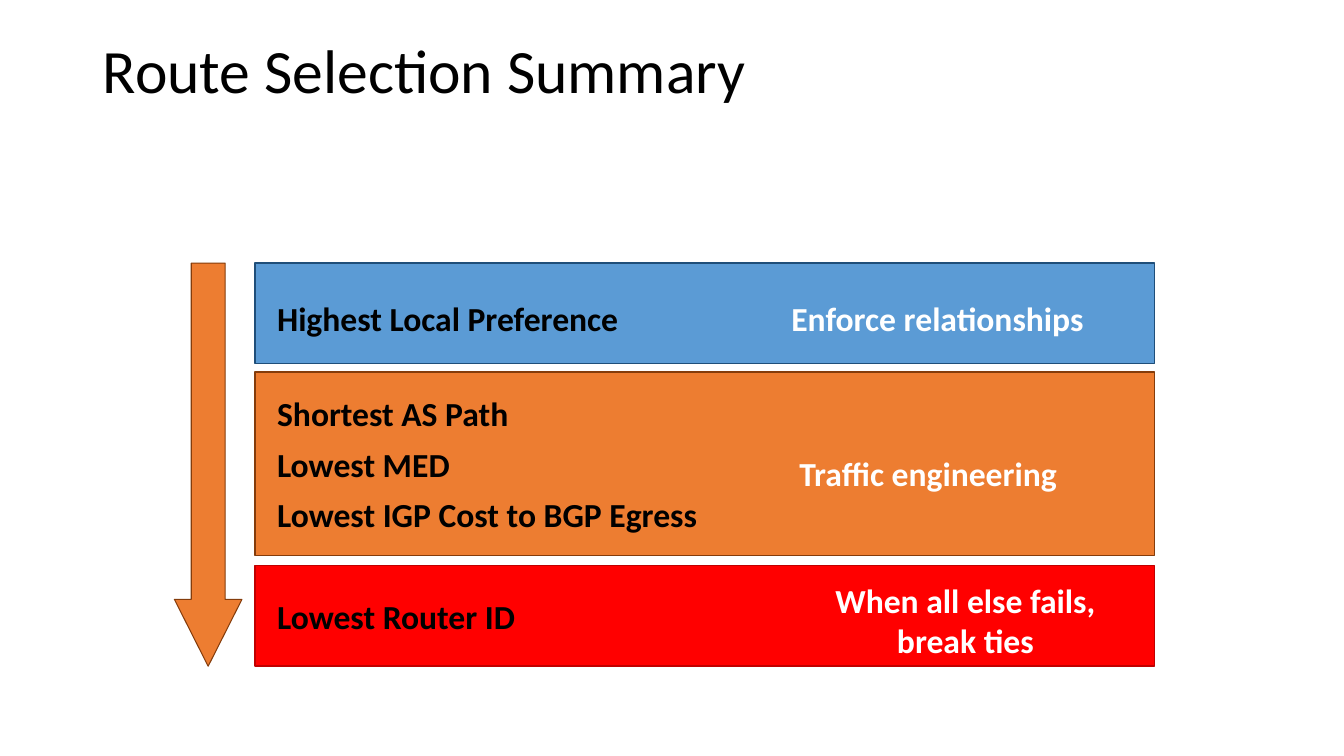
from dataclasses import dataclass

from pptx import Presentation
from pptx.dml.color import RGBColor
from pptx.enum.shapes import MSO_SHAPE
from pptx.enum.text import MSO_ANCHOR, PP_ALIGN
from pptx.util import Pt

RECTANGLE, DOWN_ARROW = MSO_SHAPE.RECTANGLE, MSO_SHAPE.DOWN_ARROW
LEFT, CENTER = PP_ALIGN.LEFT, PP_ALIGN.CENTER
TOP, MIDDLE = MSO_ANCHOR.TOP, MSO_ANCHOR.MIDDLE
PX = 9144


@dataclass(frozen=True)
class Theme:
    font: str = "Calibri"
    title_size: int = 44
    label_size: int = 24
    black: str = "000000"
    white: str = "FFFFFF"
    blue: str = "5B9BD5"
    blue_edge: str = "1F4E79"
    orange: str = "ED7D31"
    orange_edge: str = "843C0B"
    red: str = "FF0000"
    red_edge: str = "C00000"


theme = Theme()


def write(frame, text, *, size=theme.label_size, color=theme.black, bold=True,
          align=LEFT, anchor=TOP, wrap=False, spacing=1.0):
    frame.word_wrap = wrap
    frame.vertical_anchor = anchor
    frame.text = text
    for paragraph in frame.paragraphs:
        paragraph.alignment = align
        paragraph.line_spacing = spacing
        for run in paragraph.runs:
            run.font.name = theme.font
            run.font.size = Pt(size)
            run.font.bold = bold
            run.font.color.rgb = RGBColor.from_string(color)


def draw(kind, box, fill, edge, weight):
    shape = slide.shapes.add_shape(kind, *(n * PX for n in box))
    shape.shadow.inherit = False
    shape.fill.solid()
    shape.fill.fore_color.rgb = RGBColor.from_string(fill)
    shape.line.color.rgb = RGBColor.from_string(edge)
    shape.line.width = Pt(weight)
    return shape


presentation = Presentation()
presentation.slide_width, presentation.slide_height = 1333 * PX, 750 * PX
slide = presentation.slides.add_slide(presentation.slide_layouts[5])

title = slide.shapes.title
title.left, title.top, title.width, title.height = (n * PX for n in (92, 0, 1150, 145))
write(title.text_frame, "Route Selection Summary", size=theme.title_size,
      bold=False, anchor=MIDDLE, wrap=True, spacing=0.9)

bands = [
    (261, 100, theme.blue, theme.blue_edge),
    (369, 182, theme.orange, theme.orange_edge),
    (561, 100, theme.red, theme.red_edge),
]
for top, height, fill, edge in bands:
    draw(RECTANGLE, (253, top, 892, height), fill, edge, 1)

criteria = [
    ("Highest Local Preference", 291, 363),
    ("Shortest AS Path", 385, 252),
    ("Lowest MED", 435, 194),
    ("Lowest IGP Cost to BGP Egress", 485, 541),
    ("Lowest Router ID", 586, 259),
]
for text, top, width in criteria:
    criterion = slide.shapes.add_textbox(265 * PX, top * PX, width * PX, 50 * PX)
    write(criterion.text_frame, text)

purposes = [
    ("Enforce relationships", (775, 291, 313, 50), LEFT),
    ("Traffic engineering", (783, 444, 287, 50), LEFT),
    ("When all else fails,\nbreak ties", (817, 570, 281, 91), CENTER),
]
for text, box, align in purposes:
    purpose = slide.shapes.add_textbox(*(n * PX for n in box))
    write(purpose.text_frame, text, color=theme.white, align=align)

priority_arrow = draw(DOWN_ARROW, (173, 261, 67, 400), theme.orange, theme.orange_edge, 0.75)
priority_arrow.adjustments[0] = 0.5
priority_arrow.adjustments[1] = 0.99

presentation.save("out.pptx")
